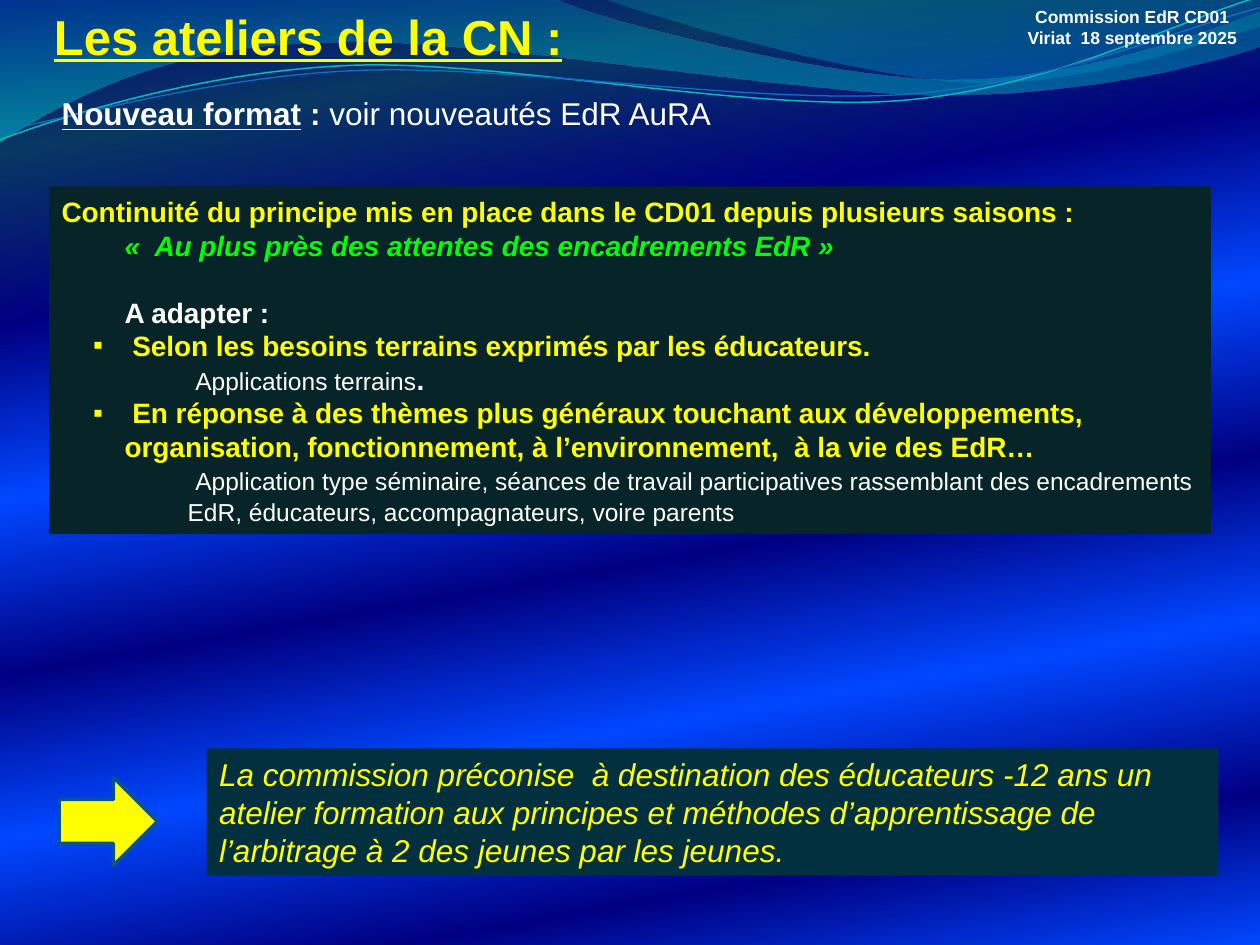
from lxml import etree
from pptx import Presentation, util as u
from pptx.dml.color import RGBColor
from pptx.enum import shapes, text
from pptx.oxml.ns import qn

FONT = "Arial"
YELLOW = RGBColor(0xFF, 0xFF, 0x00)
GREEN = RGBColor(0x00, 0xFF, 0x00)
WHITE = RGBColor(0xFF, 0xFF, 0xFF)
DARK_GREEN = RGBColor(0x07, 0x24, 0x28)
DARK_TEAL = RGBColor(0x02, 0x30, 0x3E)
ARROW_BLUE = RGBColor(0x0B, 0x52, 0x92)
NAVY = RGBColor(0x00, 0x00, 0x82)
BRIGHT_BLUE = RGBColor(0x00, 0x47, 0xFF)
SLATE_BLUE = RGBColor(0x08, 0x37, 0x63)
TURQUOISE = RGBColor(0x0A, 0xB8, 0xBF)
MID_BLUE = RGBColor(0x0F, 0x6F, 0xC6)

# Gradient stops: position %, colour, opacity %
BACKGROUND = [(0, NAVY, 100), (13, SLATE_BLUE, 100), (28, NAVY, 100), (43, BRIGHT_BLUE, 100),
              (58, NAVY, 100), (72, BRIGHT_BLUE, 100), (87, NAVY, 100), (100, BRIGHT_BLUE, 100)]
LEFT_WAVE = [(0, RGBColor(0x00, 0x74, 0xA1), 45), (100, RGBColor(0x00, 0xC6, 0xCF), 55)]
RIGHT_WAVE = [(0, RGBColor(0x00, 0xA1, 0xA9), 30), (80, RGBColor(0x00, 0x8B, 0xBF), 45)]

# Outlines: a start point, then points (2 numbers) or Bezier curves (6 numbers)
WAVES = [
    (LEFT_WAVE, [(0, -0.01), (4.4, -0.01), (4.76, 0.17, 6.64, 0.63, 7.58, 0.63),
                 (8.53, 0.63, 9.58, 0.26, 10, 0.09), (10.01, 0.36),
                 (9.83, 0.44, 8.7, 0.76, 7.46, 0.75), (6.22, 0.75, 3.82, 0.28, 2.57, 0.34),
                 (1.29, 0.35, 0.46, 0.83, -0.01, 1.13)]),
    (RIGHT_WAVE, [(4.79, -0.01), (5.09, 0.11, 6.82, 0.62, 7.69, 0.65),
                  (8.56, 0.69, 9.61, 0.32, 10, 0.21), (10, 0)]),
]
WAVE_LINES = [
    (TURQUOISE, 0.85, [(0, 1.11), (0.48, 0.93, 1.58, 0.57, 2.77, 0.52),
                       (3.95, 0.47, 5.93, 0.89, 7.13, 0.8), (8.33, 0.71, 9.38, 0.15, 9.98, -0.02)]),
    (MID_BLUE, 0.75, [(0, 1.04), (0.47, 0.96, 1.64, 0.61, 2.83, 0.56),
                      (4.03, 0.51, 5.97, 0.83, 7.17, 0.75), (8.36, 0.67, 9.41, 0.21, 10, 0.06)]),
]

# Paragraph: runs of (text, changes to the font), then paragraph options
TITLE = [([("Les ateliers de la CN :", {})], {"size": 28, "bold": True, "underline": True})]
FORMAT = [([("Nouveau format", {"bold": True, "underline": True}), (" : ", {"bold": True}),
            ("voir nouveautés EdR AuRA", {})], {"size": 18, "color": WHITE})]
HEADER = [([(line, {})], {"size": 10, "bold": True, "color": WHITE, "center": True})
          for line in ("Commission EdR CD01", "Viriat  18 septembre 2025")]
ADVICE = [([("La commission préconise  à destination des éducateurs -12 ans un atelier formation "
             "aux principes et méthodes d’apprentissage de l’arbitrage à 2 des jeunes par les "
             "jeunes.", {})], {"size": 18, "italic": True})]
STRONG = {"size": 16, "bold": True}
ITEM = {**STRONG, "margin": 0.5, "bullet": "▪"}
DETAIL = {"size": 14, "color": WHITE, "margin": 1}
PRINCIPLE = [
    ([("Continuité du principe mis en place dans le CD01 depuis plusieurs saisons :", {})], STRONG),
    ([("«  Au plus près des attentes des encadrements EdR »", {})],
     {**STRONG, "color": GREEN, "italic": True, "margin": 0.5}),
    ([("A adapter :", {})], {**STRONG, "color": WHITE, "margin": 0.5, "before": 19}),
    ([(" Selon les besoins terrains exprimés par les éducateurs.", {})], ITEM),
    ([(" ", STRONG), ("Applications terrains", {}), (".", STRONG)], DETAIL),
    ([(" En réponse à des thèmes plus généraux touchant aux développements, organisation, "
       "fonctionnement, à l’environnement,  à la vie des EdR…", {})], ITEM),
    ([(" ", STRONG), ("Application type séminaire, séances de travail participatives rassemblant "
                      "des encadrements EdR, éducateurs, accompagnateurs, voire parents", {})],
     DETAIL),
]

# Box: left, top, width, height, fill, wrap, paragraphs
BOXES = [
    (0.33, 0, 4.83, 0.57, None, True, TITLE),
    (0.39, 1.48, 9.22, 2.76, DARK_GREEN, True, PRINCIPLE),
    (0.39, 0.7, 5.62, 0.4, None, False, FORMAT),
    (1.64, 5.94, 8.03, 1.01, DARK_TEAL, True, ADVICE),
    (7.97, 0, 2.03, 0.44, None, True, HEADER),
]
ARROW = (0.47, 6.17, 0.78, 0.7)
BULLET_GAP = 0.25


def set_gradient(fill, stops, angle):
    """Give a fill any number of stops; the angle runs clockwise in degrees."""
    fill.gradient()
    stop_list = fill.gradient_stops[0]._gs.getparent()
    for child in list(stop_list):
        stop_list.remove(child)
    for position, color, opacity in stops:
        stop = etree.SubElement(stop_list, qn("a:gs"), pos=str(position * 1000))
        rgb = etree.SubElement(stop, qn("a:srgbClr"), val=str(color))
        if opacity < 100:
            etree.SubElement(rgb, qn("a:alpha"), val=str(opacity * 1000))
    fill.gradient_angle = 360 - angle


def add_outline(slide, outline, close):
    """Draw a freeform through the end points, then bend the segments that are curves."""
    parts = [tuple(map(u.Inches, part)) for part in outline]
    builder = slide.shapes.build_freeform(*parts[0])
    builder.add_line_segments([part[-2:] for part in parts[1:]], close=close)
    shape = builder.convert_to_shape()
    shape.shadow.inherit = False
    segments = list(shape._element.iter(qn("a:lnTo")))
    for segment, part in zip(segments, parts[1:]):
        if len(part) == 6:
            curve = etree.Element(qn("a:cubicBezTo"))
            for x, y in zip(part[::2], part[1::2]):
                etree.SubElement(curve, qn("a:pt"), x=str(x - shape.left), y=str(y - shape.top))
            segment.getparent().replace(segment, curve)
    return shape


def set_font(font, size, color, bold=None, italic=None, underline=None):
    font.name = FONT
    font.size = u.Pt(size)
    font.color.rgb = color
    font.bold, font.italic, font.underline = bold, italic, underline


def write_paragraph(paragraph, runs, margin=0, bullet=None, before=0, center=False,
                    color=YELLOW, **style):
    paragraph.alignment = text.PP_ALIGN.CENTER if center else text.PP_ALIGN.LEFT
    if before:
        paragraph.space_before = u.Pt(before)
    properties = paragraph._p.get_or_add_pPr()
    properties.set("marL", str(u.Inches(margin)))
    properties.set("indent", str(u.Inches(-BULLET_GAP if bullet else 0)))
    if bullet:
        etree.SubElement(properties, qn("a:buFont"), typeface=FONT)
        etree.SubElement(properties, qn("a:buChar"), char=bullet)
    set_font(paragraph.font, color=color, **style)
    for words, changes in runs:
        run = paragraph.add_run()
        run.text = words
        set_font(run.font, **{"color": color, **style, **changes})


def add_box(slide, left, top, width, height, fill, wrap, paragraphs):
    place = [u.Inches(length) for length in (left, top, width, height)]
    if fill is None:
        box = slide.shapes.add_textbox(*place)
    else:
        box = slide.shapes.add_shape(shapes.MSO_SHAPE.RECTANGLE, *place)
        box.shadow.inherit = False
        box.fill.solid()
        box.fill.fore_color.rgb = fill
        box.line.fill.background()
    frame = box.text_frame
    frame.word_wrap = wrap
    frame.auto_size = text.MSO_AUTO_SIZE.SHAPE_TO_FIT_TEXT
    for index, (runs, options) in enumerate(paragraphs):
        paragraph = frame.add_paragraph() if index else frame.paragraphs[0]
        write_paragraph(paragraph, runs, **options)


def main():
    presentation = Presentation()
    presentation.slide_width, presentation.slide_height = u.Inches(10), u.Inches(7.5)
    slide = presentation.slides.add_slide(presentation.slide_layouts[6])
    set_gradient(slide.background.fill, BACKGROUND, 80)

    for stops, outline in WAVES:
        wave = add_outline(slide, outline, close=True)
        set_gradient(wave.fill, stops, 90)
        wave.line.fill.background()
    for color, width, outline in WAVE_LINES:
        curve = add_outline(slide, outline, close=False)
        curve.fill.background()
        curve.line.color.rgb = color
        curve.line.width = u.Pt(width)

    for box in BOXES:
        add_box(slide, *box)

    arrow = slide.shapes.add_shape(shapes.MSO_SHAPE.RIGHT_ARROW, *map(u.Inches, ARROW))
    arrow.shadow.inherit = False
    arrow.fill.solid()
    arrow.fill.fore_color.rgb = YELLOW
    arrow.line.color.rgb = ARROW_BLUE
    arrow.line.width = u.Pt(2)

    presentation.save("out.pptx")


if __name__ == "__main__":
    main()
